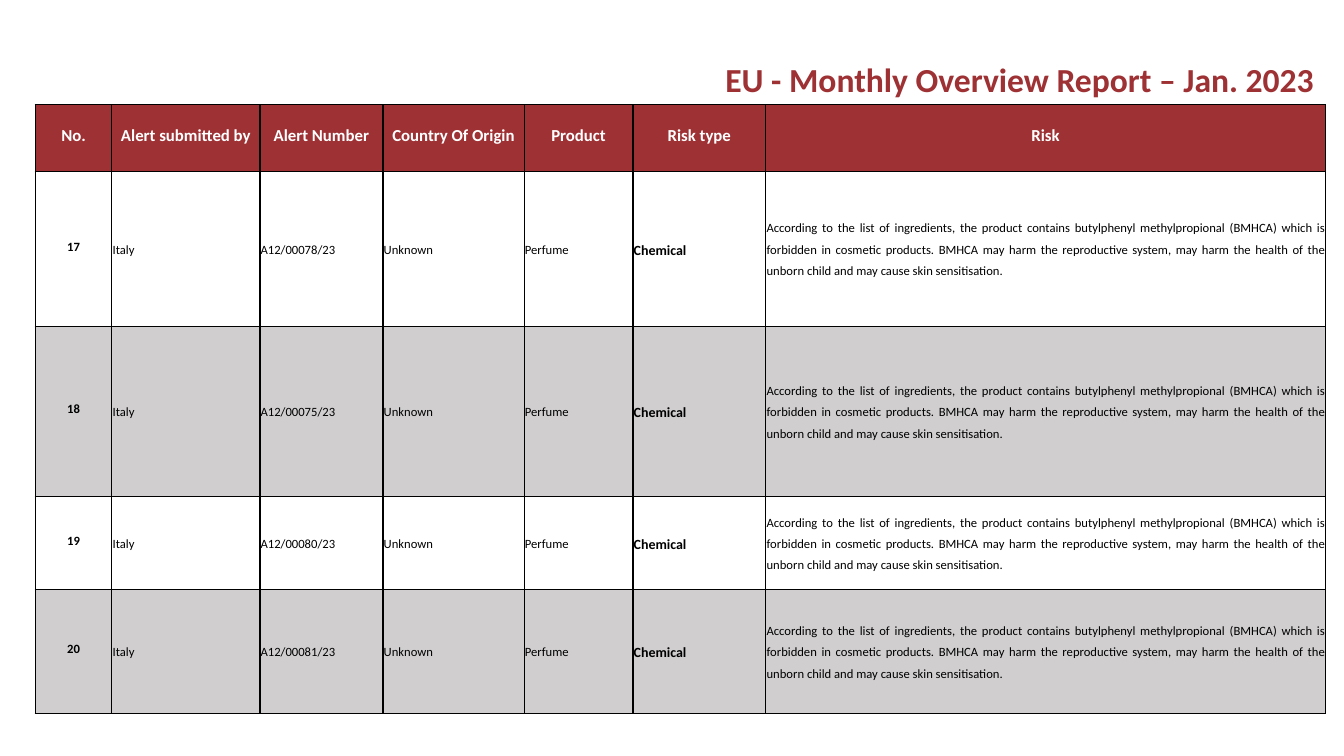
from lxml import etree
from pptx import Presentation
from pptx import util as u
from pptx.dml.color import RGBColor
from pptx.enum import text
from pptx.oxml import ns

COLORS = {"red": "9E3134", "gray": "D0CECE", "white": "FFFFFF", "black": "000000"}
FONT = "Calibri"

HEADERS = ["No.", "Alert submitted by", "Alert Number", "Country Of Origin",
           "Product", "Risk type", "Risk"]
ALERT_NUMBERS = ["A12/00078/23", "A12/00075/23", "A12/00080/23", "A12/00081/23"]
FIRST_NO = 17
RISK = ("According to the list of ingredients, the product contains butylphenyl "
        "methylpropional (BMHCA) which is forbidden in cosmetic products. BMHCA may "
        "harm the reproductive system, may harm the health of the unborn child and "
        "may cause skin sensitisation.")
COLUMN_WIDTHS = [1.93, 3.73, 3.1, 3.56, 2.74, 3.35, 14.1]
ROW_HEIGHTS = [1.68, 3.91, 4.29, 2.34, 3.12]


def style_text(para, size, color, bold):
    for span in para.runs:
        span.font.name = FONT
        span.font.size = u.Pt(size)
        span.font.bold = bold
        span.font.color.rgb = RGBColor.from_string(COLORS[color])


def add_borders(cell):
    properties = cell._tc.get_or_add_tcPr()
    for position, side in enumerate(("lnL", "lnR", "lnT", "lnB")):
        line = etree.Element(ns.qn("a:" + side), w=str(u.Pt(1)))
        fill = etree.SubElement(line, ns.qn("a:solidFill"))
        etree.SubElement(fill, ns.qn("a:srgbClr"), val=COLORS["black"])
        properties.insert(position, line)


deck = Presentation()
deck.slide_width, deck.slide_height = u.Cm(33.87), u.Cm(19.05)
page = deck.slides.add_slide(deck.slide_layouts[6])

# Title
box = page.shapes.add_textbox(u.Cm(18.03), u.Cm(1.35), u.Cm(15.34), u.Cm(1.27))
box.text_frame.word_wrap = False
box.text_frame.auto_size = text.MSO_AUTO_SIZE.SHAPE_TO_FIT_TEXT
box.text_frame.text = "EU - Monthly Overview Report – Jan. 2023"
style_text(box.text_frame.paragraphs[0], 24, "red", True)

# Table grid
rows = [HEADERS]
for offset, alert in enumerate(ALERT_NUMBERS):
    rows.append([str(FIRST_NO + offset), "Italy", alert, "Unknown", "Perfume",
                 "Chemical", RISK])
table = page.shapes.add_table(
    len(rows), len(HEADERS), u.Cm(0.89), u.Cm(2.64),
    u.Cm(sum(COLUMN_WIDTHS)), u.Cm(sum(ROW_HEIGHTS))).table
for column, width in zip(table.columns, COLUMN_WIDTHS):
    column.width = u.Cm(width)
for row, height in zip(table.rows, ROW_HEIGHTS):
    row.height = u.Cm(height)

# Table cells
for r, values in enumerate(rows):
    for c, value in enumerate(values):
        cell = table.cell(r, c)
        cell.margin_left = cell.margin_right = cell.margin_top = u.Cm(0.02)
        cell.margin_bottom = u.Cm(0.13)
        cell.vertical_anchor = text.MSO_ANCHOR.MIDDLE
        cell.text_frame.text = value
        para = cell.text_frame.paragraphs[0]
        if r == 0 or c == 0:
            para.alignment = text.PP_ALIGN.CENTER
        else:
            para.alignment = text.PP_ALIGN.JUSTIFY
            para.line_spacing = 1.4

        if r == 0:
            style_text(para, 12, "white", True)
        else:
            is_risk_type = HEADERS[c] == "Risk type"
            style_text(para, 10 if is_risk_type else 9, "black", c == 0 or is_risk_type)

        if r % 2 and r > 0:
            cell.fill.background()
        else:
            cell.fill.solid()
            cell.fill.fore_color.rgb = RGBColor.from_string(COLORS["gray" if r else "red"])
        add_borders(cell)

deck.save("out.pptx")
